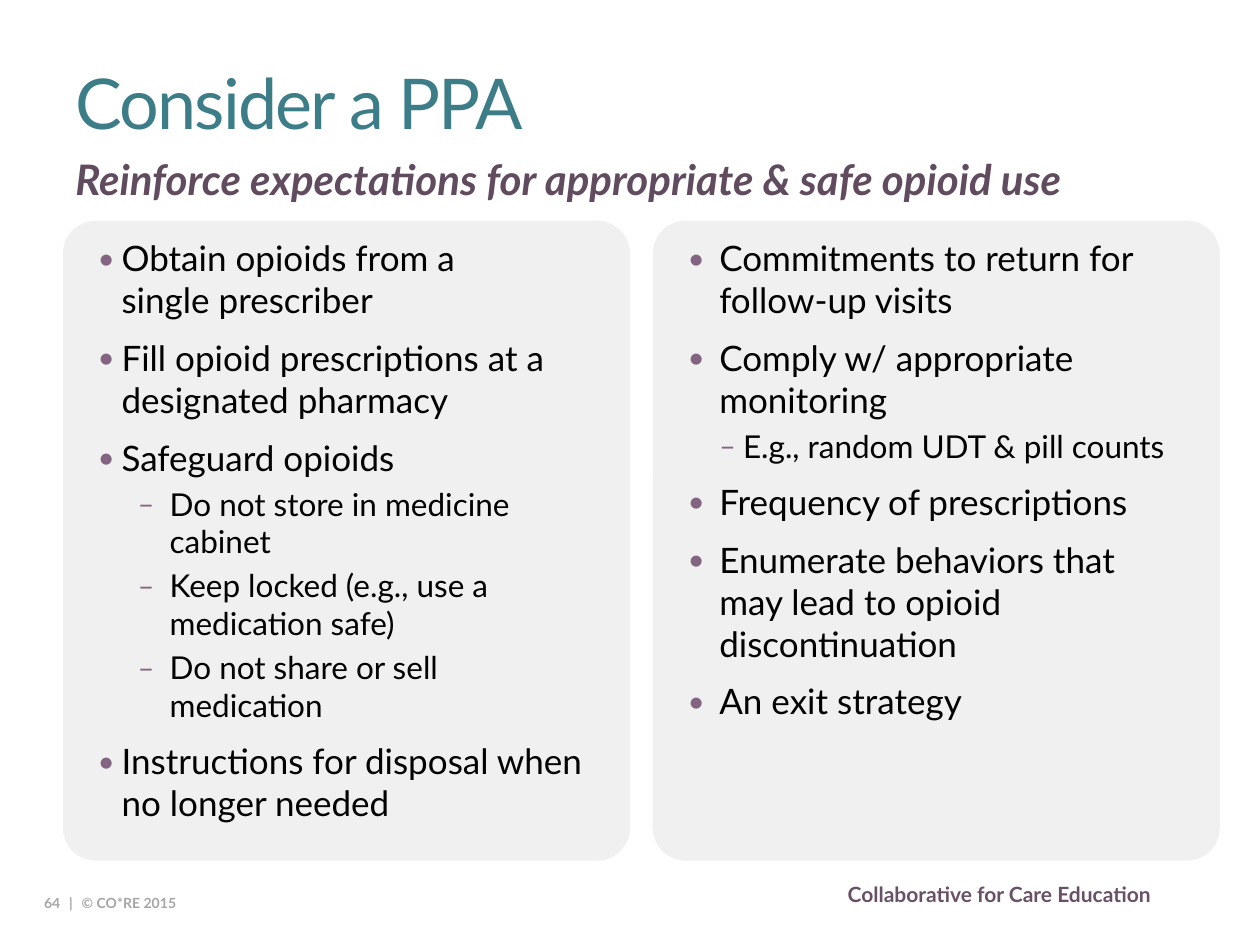
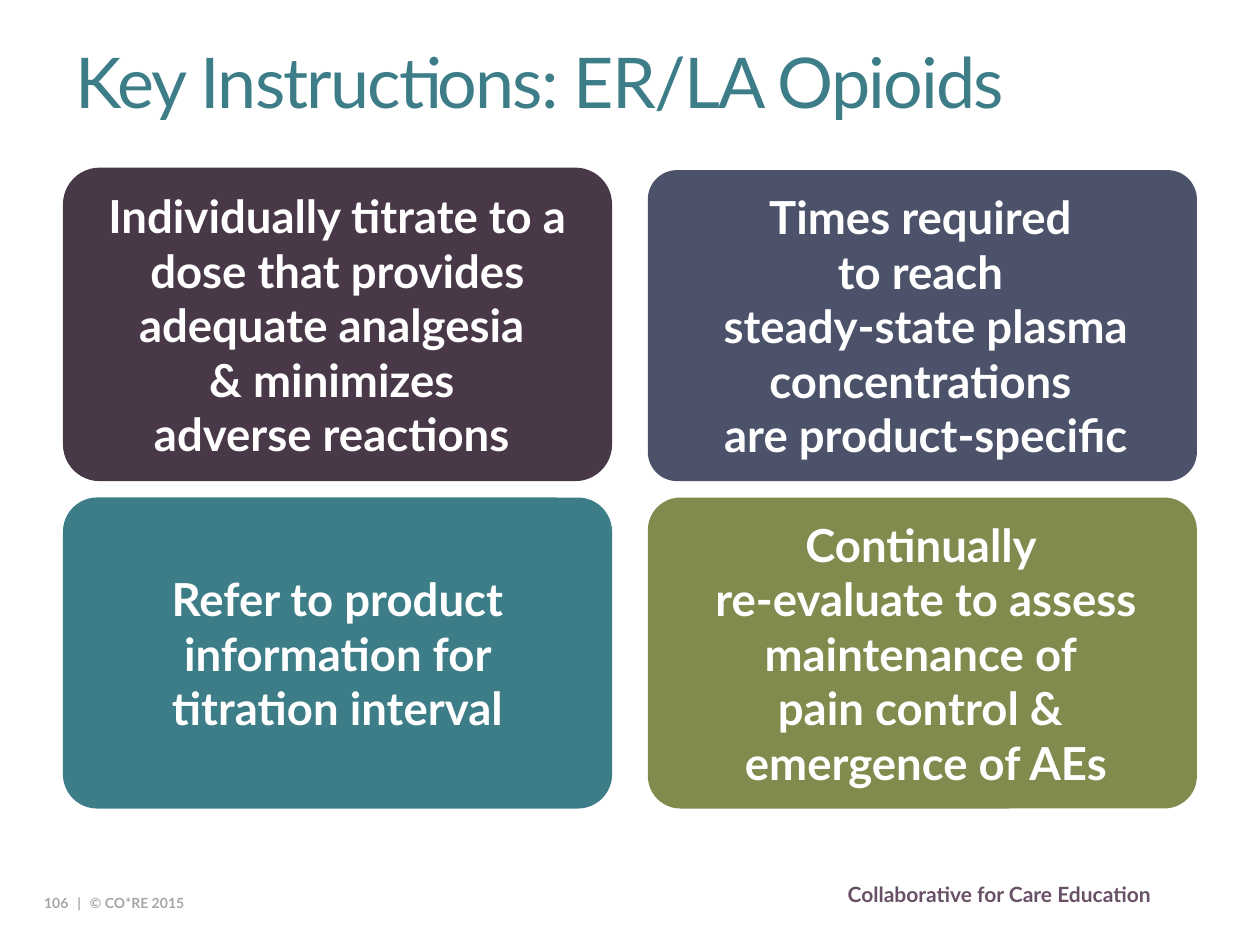
"""Build two slides on opioid prescribing: patient agreement and key instructions."""
from copy import deepcopy
from dataclasses import dataclass

from lxml.etree import SubElement
from pptx import Presentation
from pptx.dml.color import RGBColor
from pptx.enum.shapes import MSO_SHAPE
from pptx.enum.text import MSO_ANCHOR, MSO_AUTO_SIZE, PP_ALIGN
from pptx.oxml.ns import qn
from pptx.util import Cm, Pt

FONT = "Lato"
TEAL = RGBColor(0x3C, 0x7D, 0x88)
PLUM = RGBColor(0x61, 0x4B, 0x5F)
FOOTER_PLUM = RGBColor(0x68, 0x50, 0x66)
DARK_PLUM = RGBColor(0x49, 0x38, 0x47)
BULLET_PLUM = RGBColor(0x83, 0x65, 0x81)
SLATE = RGBColor(0x4B, 0x52, 0x69)
OLIVE = RGBColor(0x80, 0x8C, 0x4E)
PANEL_GRAY = RGBColor(0xF0, 0xF0, 0xF0)
FOOTER_GRAY = RGBColor(0xA6, 0xA6, 0xA6)
BLACK = RGBColor(0, 0, 0)
WHITE = RGBColor(0xFF, 0xFF, 0xFF)

MARGIN = Cm(1.27)
SIDE_INSET = Cm(0.51)
EDGE_INSET = Cm(0.13)
CORNER_INSET = Cm(0.19)

PANEL_TOP, PANEL_WIDTH, PANEL_HEIGHT = Cm(4.45), Cm(11.43), Cm(12.9)
PANEL_STEP = Cm(11.89)
CARD_TOP, CARD_WIDTH, CARD_HEIGHT = Cm(3.43), Cm(11.07), Cm(6.27)
CARD_STEP_X, CARD_STEP_Y = Cm(11.79), Cm(6.6)


@dataclass(frozen=True)
class Bullet:
    """Look of one list level."""

    character: str
    margin: Cm
    hanging: Cm
    size: int
    space_before: float
    percent: int


@dataclass(frozen=True)
class Item:
    """One list entry with its level."""

    text: str
    level: int = 0


@dataclass(frozen=True)
class Panel:
    """A list on a gray panel, with one bullet style per level."""

    bullets: tuple[Bullet, Bullet]
    items: tuple[Item, ...]


@dataclass(frozen=True)
class Card:
    """A coloured card in the grid of instructions."""

    text: str
    column: int
    row: int
    fill: RGBColor
    rounding: float
    rise: Cm = Cm(0)


def main_bullet(margin):
    """Return the first-level bullet, hung from the given margin."""
    return Bullet("•", margin, margin, 20, 9, 85)


def sub_bullet(margin, hanging):
    """Return the second-level dash."""
    return Bullet("–", margin, hanging, 18, 3.6, 90)


PANELS = (
    Panel(
        (main_bullet(Cm(0.48)), sub_bullet(Cm(1.45), Cm(0.64))),
        (
            Item("Obtain opioids from a \nsingle prescriber"),
            Item("Fill opioid prescriptions at a designated pharmacy"),
            Item("Safeguard opioids"),
            Item("Do not store in medicine cabinet", 1),
            Item("Keep locked (e.g., use a medication safe)", 1),
            Item("Do not share or sell medication", 1),
            Item("Instructions for disposal when no longer needed"),
        ),
    ),
    Panel(
        (main_bullet(Cm(0.64)), sub_bullet(Cm(1.12), Cm(0.48))),
        (
            Item("Commitments to return for follow-up visits"),
            Item("Comply w/ appropriate monitoring"),
            Item("E.g., random UDT & pill counts", 1),
            Item("Frequency of prescriptions"),
            Item("Enumerate behaviors that may lead to opioid discontinuation"),
            Item("An exit strategy"),
        ),
    ),
)

CARDS = (
    Card("Individually titrate to a dose that provides adequate analgesia \n"
         "& minimizes \nadverse reactions ", 0, 0, DARK_PLUM, 0.117, Cm(0.05)),
    Card("Times required \nto reach \nsteady-state plasma concentrations \n"
         "are product-specific", 1, 0, SLATE, 0.094),
    Card("Refer to product information for titration interval", 0, 1, TEAL, 0.11),
    Card("Continually \nre-evaluate to assess maintenance of \npain control & \n"
         "emergence of AEs", 1, 1, OLIVE, 0.105),
)


def write(paragraph, text: str, *, size: float, color: RGBColor, bold: bool = False,
          italic: bool = False, spacing: float = 0, align=PP_ALIGN.LEFT) -> None:
    """Append formatted text to a paragraph, breaking lines at newlines."""
    paragraph.alignment = align
    for index, line in enumerate(text.split("\n")):
        if index:
            paragraph.add_line_break()
        run = paragraph.add_run()
        run.text = line
        font = run.font
        font.name, font.size, font.bold, font.italic = FONT, Pt(size), bold, italic
        font.color.rgb = color
        if spacing:
            run._r.get_or_add_rPr().set("spc", str(round(spacing * 100)))
    for line_break in paragraph._p.findall(qn("a:br")):
        if len(line_break) == 0:
            line_break.append(deepcopy(run._r.get_or_add_rPr()))


def set_frame(frame, anchor=MSO_ANCHOR.TOP, side: int = Cm(0.25)) -> None:
    """Give a text frame wrapping, insets and a vertical anchor."""
    frame.word_wrap = True
    frame.auto_size = MSO_AUTO_SIZE.NONE
    frame.vertical_anchor = anchor
    frame.margin_left = frame.margin_right = side
    frame.margin_top = frame.margin_bottom = EDGE_INSET


def place(shape, left: int, top: int, width: int, height: int) -> None:
    """Move and size a shape."""
    shape.left, shape.top, shape.width, shape.height = left, top, width, height


def add_text_box(slide, left: int, top: int, width: int, height: int,
                 anchor=MSO_ANCHOR.TOP):
    """Add a text box and return its first paragraph."""
    frame = slide.shapes.add_textbox(left, top, width, height).text_frame
    set_frame(frame, anchor)
    return frame.paragraphs[0]


def add_rounded(slide, left: int, top: int, width: int, height: int,
                fill: RGBColor, rounding: float):
    """Add a flat rounded rectangle without outline."""
    shape = slide.shapes.add_shape(MSO_SHAPE.ROUNDED_RECTANGLE, left, top, width, height)
    shape.adjustments[0] = rounding
    shape.shadow.inherit = False
    shape.fill.solid()
    shape.fill.fore_color.rgb = fill
    shape.line.fill.background()
    return shape


def add_base_slide(presentation, layout_index: int, title: str, title_top: int, number: int):
    """Add a slide with its title and both footers."""
    slide = presentation.slides.add_slide(presentation.slide_layouts[layout_index])
    place(slide.shapes.title, MARGIN, title_top, Cm(22.86), Cm(2.74))
    frame = slide.shapes.title.text_frame
    set_frame(frame)
    write(frame.paragraphs[0], title, size=40, color=TEAL, spacing=-1)

    paragraph = add_text_box(slide, Cm(16.84), Cm(17.65), Cm(7.29), Cm(0.76))
    write(paragraph, "Collaborative for Care Education", size=12, color=FOOTER_PLUM, bold=True)

    paragraph = add_text_box(slide, Cm(0.64), Cm(17.88), Cm(4.45), Cm(0.66), MSO_ANCHOR.MIDDLE)
    for text, spacing in ((str(number), 0), (" |", 3.1), (" © CO*RE 2015", 0)):
        write(paragraph, text, size=8, color=FOOTER_GRAY, bold=True, spacing=spacing)
    return slide


def set_bullet(paragraph, bullet: Bullet) -> None:
    """Give a paragraph its hanging bullet."""
    properties = paragraph._p.get_or_add_pPr()
    properties.set("marL", str(bullet.margin))
    properties.set("indent", str(-bullet.hanging))
    color = SubElement(properties, qn("a:buClr"))
    SubElement(color, qn("a:srgbClr"), val=str(BULLET_PLUM))
    SubElement(properties, qn("a:buSzPct"), val=str(bullet.percent * 1000))
    SubElement(properties, qn("a:buFont"), typeface=FONT)
    SubElement(properties, qn("a:buChar"), char=bullet.character)


def fill_panel(slide, placeholder, panel: Panel, left: int) -> None:
    """Put a list placeholder on a gray rounded panel."""
    background = add_rounded(slide, left, PANEL_TOP, PANEL_WIDTH, PANEL_HEIGHT,
                             PANEL_GRAY, 0.058)
    placeholder._element.addprevious(background._element)
    place(placeholder, left + CORNER_INSET, PANEL_TOP + CORNER_INSET,
          PANEL_WIDTH - 2 * CORNER_INSET, PANEL_HEIGHT - 2 * CORNER_INSET)
    frame = placeholder.text_frame
    set_frame(frame, side=SIDE_INSET)
    for index, item in enumerate(panel.items):
        paragraph = frame.add_paragraph() if index else frame.paragraphs[0]
        bullet = panel.bullets[item.level]
        paragraph.level = item.level
        set_bullet(paragraph, bullet)
        paragraph.space_before = Pt(bullet.space_before if index else 0)
        write(paragraph, item.text, size=bullet.size, color=BLACK)


def add_card(slide, card: Card) -> None:
    """Draw one instruction card at its place in the grid."""
    shape = add_rounded(slide, MARGIN + card.column * CARD_STEP_X,
                        CARD_TOP + card.row * CARD_STEP_Y - card.rise,
                        CARD_WIDTH, CARD_HEIGHT + card.rise, card.fill, card.rounding)
    set_frame(shape.text_frame, MSO_ANCHOR.MIDDLE, SIDE_INSET)
    paragraph = shape.text_frame.paragraphs[0]
    paragraph._p.get_or_add_pPr().set("marL", str(card.column * Cm(0.15)))
    write(paragraph, card.text, size=26, color=WHITE, bold=True, align=PP_ALIGN.CENTER)


def build_agreement_slide(presentation) -> None:
    """Build the slide on the patient agreement."""
    slide = add_base_slide(presentation, 3, "Consider a PPA", Cm(1.07), 64)
    paragraph = add_text_box(slide, MARGIN, Cm(2.97), Cm(23.8), Cm(3.48))
    write(paragraph, "Reinforce expectations for appropriate & safe opioid use",
          size=24, color=PLUM, bold=True, italic=True)
    for index, panel in enumerate(PANELS):
        fill_panel(slide, slide.placeholders[index + 1], panel, MARGIN + index * PANEL_STEP)


def build_instructions_slide(presentation) -> None:
    """Build the slide with the four instruction cards."""
    slide = add_base_slide(presentation, 5, "Key Instructions: ER/LA Opioids", Cm(0.64), 106)
    for card in CARDS:
        add_card(slide, card)


def main() -> None:
    """Build and save the presentation."""
    presentation = Presentation()
    presentation.slide_width, presentation.slide_height = Cm(25.4), Cm(19.05)
    build_agreement_slide(presentation)
    build_instructions_slide(presentation)
    presentation.save("out.pptx")


if __name__ == "__main__":
    main()
